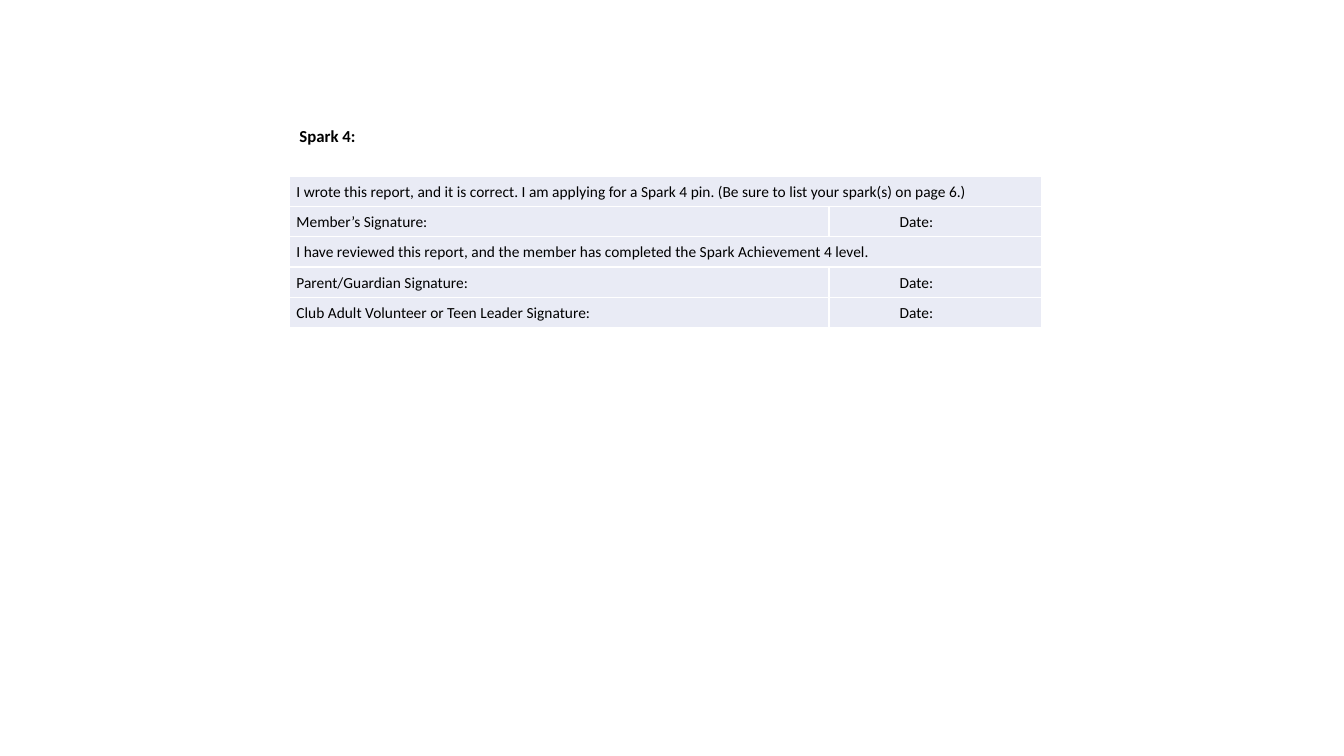
from pptx import Presentation
from pptx import util as u
from pptx.dml import color
from pptx.enum import text

WIDTH, HEIGHT = u.Inches(13.33), u.Inches(7.5)
LEFT = 21.53
COLUMN_WIDTHS = (40.15, 15.85)
ROW_HEIGHT = 4
DATE_INDENT = 0.63

STATEMENTS = [
    ("I wrote this report, and it is correct. I am applying for a Spark 4 pin. "
     "(Be sure to list your spark(s) on page 6.)",
     ["Member’s Signature:"]),
    ("I have reviewed this report, and the member has completed the "
     "Spark Achievement 4 level.",
     ["Parent/Guardian Signature:", "Club Adult Volunteer or Teen Leader Signature:"]),
]


def rgb(hex_string):
    return color.RGBColor.from_string(hex_string)


class FormSlide:
    """Holds the form's style; lengths are hundredths of the slide's width or height."""

    font, ink, cell_fill = "Calibri", "000000", "E9EBF5"
    line_spacing, cell_margin = 1.07, 0.07

    def __init__(self, presentation):
        self.slide = presentation.slides.add_slide(presentation.slide_layouts[5])

    def across(self, columns):
        return round(WIDTH * columns / 100)

    def down(self, rows):
        return round(HEIGHT * rows / 100)

    def add_words(self, frame, words, size, bold=False):
        paragraph = frame.paragraphs[0]
        paragraph.alignment = text.PP_ALIGN.LEFT
        paragraph.line_spacing = self.line_spacing
        run = paragraph.add_run()
        run.text = words
        run.font.name, run.font.size, run.font.bold = self.font, u.Pt(size), bold
        run.font.color.rgb = rgb(self.ink)

    def title(self, words, left, top, width, height):
        shape = self.slide.shapes.title
        shape.left, shape.top = self.across(left), self.down(top)
        shape.width, shape.height = self.across(width), self.down(height)
        frame = shape.text_frame
        frame.word_wrap = True
        frame.auto_size = text.MSO_AUTO_SIZE.SHAPE_TO_FIT_TEXT
        frame.vertical_anchor = text.MSO_ANCHOR.TOP
        self.add_words(frame, words, 12, bold=True)

    def cell(self, cell, words, indent=0):
        cell.margin_left = u.Inches(self.cell_margin + indent)
        cell.margin_right = u.Inches(self.cell_margin)
        cell.margin_top = cell.margin_bottom = 0
        cell.vertical_anchor = text.MSO_ANCHOR.MIDDLE
        cell.fill.solid()
        cell.fill.fore_color.rgb = rgb(self.cell_fill)
        self.add_words(cell.text_frame, words, 11)

    def signature_table(self, statements, left, top):
        """Each statement spans the table, followed by its signature and date rows."""
        row_count = sum(1 + len(signatures) for _, signatures in statements)
        table = self.slide.shapes.add_table(
            row_count, len(COLUMN_WIDTHS), self.across(left), self.down(top),
            self.across(sum(COLUMN_WIDTHS)), self.down(ROW_HEIGHT * row_count)).table
        table.first_row = table.horz_banding = False
        for column, width in zip(table.columns, COLUMN_WIDTHS):
            column.width = self.across(width)
        row = 0
        for statement, signatures in statements:
            table.cell(row, 0).merge(table.cell(row, 1))
            self.cell(table.cell(row, 0), statement)
            for row, signature in enumerate(signatures, row + 1):
                self.cell(table.cell(row, 0), signature)
                self.cell(table.cell(row, 1), "Date:", DATE_INDENT)
            row += 1


def main():
    presentation = Presentation()
    presentation.slide_width, presentation.slide_height = WIDTH, HEIGHT
    form = FormSlide(presentation)
    form.title("Spark 4:", LEFT, 15.73, 50, 4.1)
    form.signature_table(STATEMENTS, LEFT, 23.33)
    presentation.save("out.pptx")


if __name__ == "__main__":
    main()
